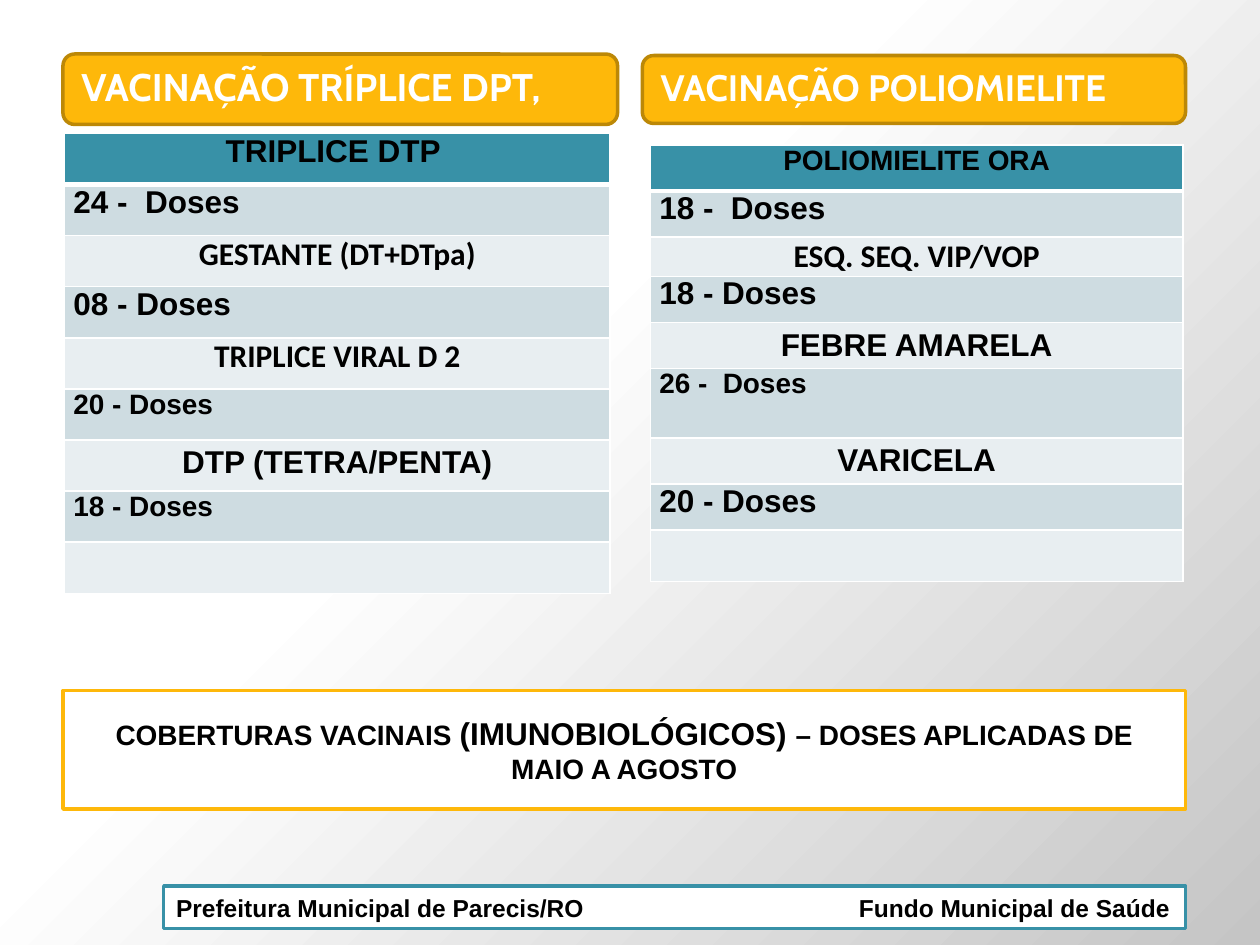
import pptx
import pptx.dml.color
import pptx.enum.shapes
import pptx.enum.text
import pptx.oxml
import pptx.oxml.ns
import pptx.util
from pptx.util import Cm

COLOURS = {
    "white": "FFFFFF", "black": "000000", "grey": "C5C5C5",
    "amber": "FEB80A", "brown": "BC8807", "teal": "3891A7",
    "dark band": "CEDCE1", "light band": "E8EEF1",
}
LEFT, CENTRE, JUSTIFY = (
    getattr(pptx.enum.text.PP_ALIGN, name) for name in ("LEFT", "CENTER", "JUSTIFY")
)
RECTANGLE = pptx.enum.shapes.MSO_SHAPE.RECTANGLE
ROUNDED = pptx.enum.shapes.MSO_SHAPE.ROUNDED_RECTANGLE
NAMESPACE = pptx.oxml.ns.nsdecls("a")


class VaccinationSlide:
    """Holds the colours and the slide, and draws each kind of element on it."""

    def __init__(self, slide, colours):
        self.slide = slide
        self.colours = colours

    def colour(self, name):
        return pptx.dml.color.RGBColor.from_string(self.colours[name])

    def background(self, stops, focus):
        self.slide.background.fill.gradient()
        gradient = self.slide.element.find(".//" + pptx.oxml.ns.qn("a:gradFill"))
        stop_xml = "".join(
            f'<a:gs pos="{position * 1000}"><a:srgbClr val="{self.colours[name]}"/></a:gs>'
            for position, name in stops
        )
        sides = " ".join(f'{side}="{value * 1000}"' for side, value in zip("ltrb", focus))
        gradient.getparent().replace(gradient, pptx.oxml.parse_xml(
            f'<a:gradFill {NAMESPACE} rotWithShape="1"><a:gsLst>{stop_xml}</a:gsLst>'
            f'<a:path path="circle"><a:fillToRect {sides}/></a:path></a:gradFill>'
        ))

    def runs(self, paragraph, pieces, font="Arial", colour="black"):
        for text, size in pieces:
            run = paragraph.add_run()
            run.text = text
            run.font.name = font
            run.font.size = pptx.util.Pt(size)
            run.font.bold = True
            run.font.color.rgb = self.colour(colour)

    def box(self, kind, place, fill, line, pieces, align=LEFT, font="Arial", colour="black"):
        shape = self.slide.shapes.add_shape(kind, *map(Cm, place))
        shape.shadow.inherit = False
        shape.fill.solid()
        shape.fill.fore_color.rgb = self.colour(fill)
        shape.line.color.rgb = self.colour(line)
        shape.line.width = pptx.util.Pt(2)
        frame = shape.text_frame
        frame.word_wrap = True
        frame.vertical_anchor = pptx.enum.text.MSO_ANCHOR.MIDDLE
        paragraph = frame.paragraphs[0]
        paragraph.alignment = align
        self.runs(paragraph, pieces, font, colour)
        return shape

    def heading(self, place, text, size):
        shape = self.box(ROUNDED, place, "amber", "brown", [(text, size)],
                         font="Cabin", colour="white")
        shape.text_frame.margin_left = Cm(0.3)
        shape.text_frame.paragraphs[0].line_spacing = 0.9

    def footer(self, place, left_text, right_text, tab):
        shape = self.box(RECTANGLE, place, "white", "teal", [(f"{left_text}\t{right_text}", 14)])
        properties = shape.text_frame.paragraphs[0]._p.get_or_add_pPr()
        properties.append(pptx.oxml.parse_xml(
            f'<a:tabLst {NAMESPACE}><a:tab pos="{Cm(tab)}" algn="r"/></a:tabLst>'
        ))

    def borders(self, cell, widths):
        properties = cell._tc.get_or_add_tcPr()
        for index, (side, width) in enumerate(zip("LRTB", widths)):
            properties.insert(index, pptx.oxml.parse_xml(
                f'<a:ln{side} {NAMESPACE} w="{pptx.util.Pt(width)}"><a:solidFill>'
                f'<a:srgbClr val="{self.colours["white"]}"/></a:solidFill></a:ln{side}>'
            ))

    def table(self, place, heights, rows):
        left, top, width = place
        frame = self.slide.shapes.add_table(
            len(heights), 1, Cm(left), Cm(top), Cm(width), Cm(sum(heights))
        )
        for index, height in enumerate(heights):
            frame.table.rows[index].height = Cm(height)
            cell = frame.table.cell(index, 0)
            band = "dark band" if index % 2 else "light band"
            cell.fill.solid()
            cell.fill.fore_color.rgb = self.colour(band if index else "teal")
            self.borders(cell, (1, 1, 3 if index == 1 else 1, 1 if index else 3))
            if index < len(rows):
                text, size, align, font, spacing = rows[index]
                cell.margin_left = cell.margin_right = Cm(0.18)
                cell.margin_top = cell.margin_bottom = 0
                paragraph = cell.text_frame.paragraphs[0]
                paragraph.alignment = align
                paragraph.line_spacing = spacing
                self.runs(paragraph, [(text, size)], font)


def main():
    presentation = pptx.Presentation()
    presentation.slide_width, presentation.slide_height = Cm(25.4), Cm(19.05)
    slide = presentation.slides.add_slide(presentation.slide_layouts[6])
    page = VaccinationSlide(slide, COLOURS)
    page.background([(0, "white"), (40, "white"), (100, "grey")], (-24, -20, 124, 120))
    page.box(RECTANGLE, (1.27, 13.92, 22.63, 2.39), "white", "amber", [
        ("COBERTURAS VACINAIS ", 16),
        ("(IMUNOBIOLÓGICOS) ", 18),
        ("– DOSES APLICADAS DE MAIO A AGOSTO", 16),
    ], CENTRE)
    page.heading((1.27, 1.09, 11.18, 1.42), "VACINAÇÃO TRÍPLICE DPT,", 22)
    page.heading((12.95, 1.12, 10.95, 1.37), "VACINAÇÃO POLIOMIELITE", 21)
    page.table((1.3, 2.69, 11), [1.03] * 9, [
        ("TRIPLICE DTP ", 18, CENTRE, "Arial", 1),
        ("24 -  Doses", 18, JUSTIFY, "Arial", 1),
        ("GESTANTE (DT+DTpa)", 18, CENTRE, "Calibri", 1),
        ("08 - Doses", 18, JUSTIFY, "Arial", 1),
        ("TRIPLICE VIRAL D 2", 18, CENTRE, "Calibri", 1),
        ("20 - Doses", 16, LEFT, "Arial", 1),
        ("DTP (TETRA/PENTA)", 18, CENTRE, "Arial", 1.15),
        ("18 - Doses", 16, JUSTIFY, "Arial", 1),
    ])
    page.table((13.11, 2.92, 10.74), [0.93, 0.93, 0.79, 0.93, 0.93, 1.4, 0.93, 0.93, 1.02], [
        ("POLIOMIELITE ORA", 16, CENTRE, "Arial", 1),
        ("18 -  Doses", 18, JUSTIFY, "Arial", 1),
        ("ESQ. SEQ. VIP/VOP", 18, CENTRE, "Calibri", 1),
        ("18 - Doses", 18, JUSTIFY, "Arial", 1),
        ("FEBRE AMARELA", 18, CENTRE, "Arial", 1.15),
        ("26 -  Doses", 16, LEFT, "Arial", 1),
        ("VARICELA", 18, CENTRE, "Arial", 1.15),
        ("20 - Doses", 18, JUSTIFY, "Arial", 1),
    ])
    page.footer((3.3, 17.86, 20.6, 0.86), "Prefeitura Municipal de Parecis/RO",
                "Fundo Municipal de Saúde", 20.04)
    presentation.save("out.pptx")


if __name__ == "__main__":
    main()
